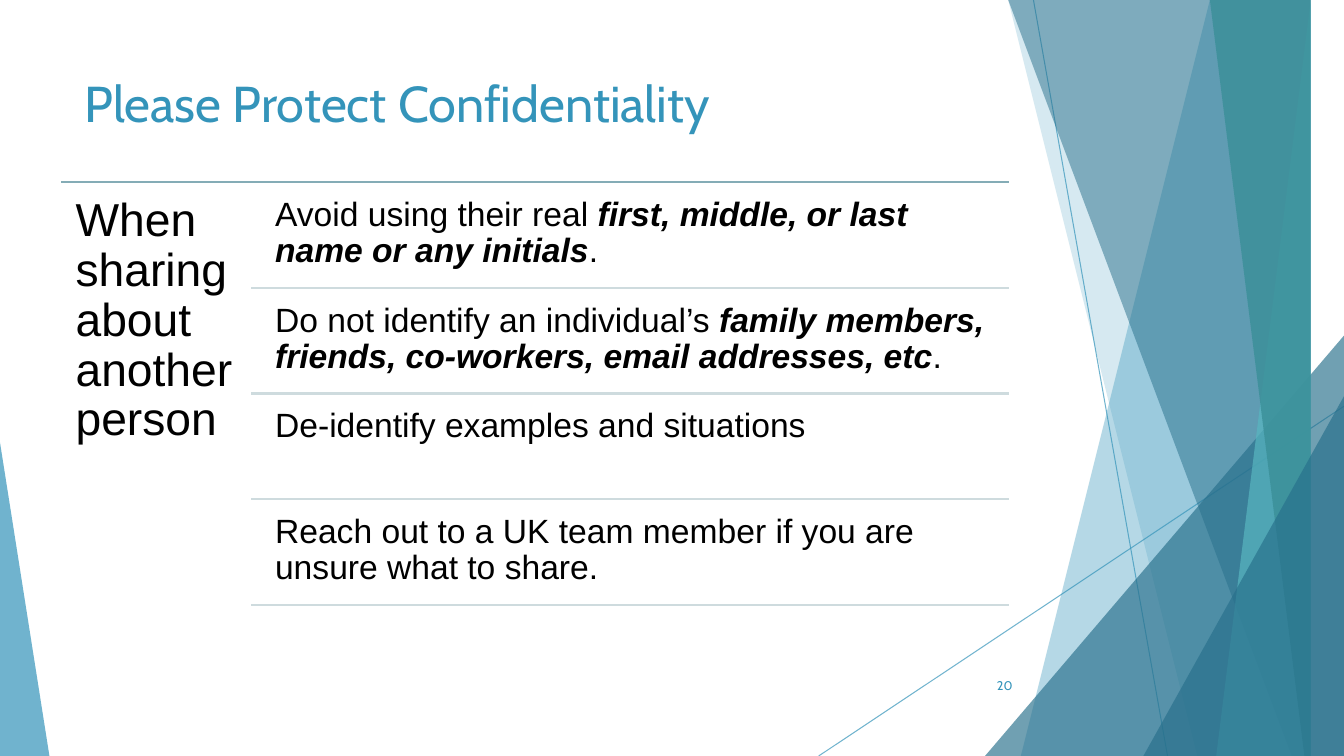
import lxml.etree
import pptx
import pptx.dml.color
import pptx.enum.shapes
import pptx.enum.text
import pptx.oxml.ns
import pptx.util

Inches = pptx.util.Inches
SLIDE_WIDTH, SLIDE_HEIGHT = 13.33, 7.5

COLORS = {
    "blue": "3494BA",
    "deep_blue": "276F8B",
    "aqua": "58B6C0",
    "teal": "3A8F98",
    "top_rule": "84ACB6",
    "row_rule": "CEDBDE",
    "text": "000000",
}

# Grid of the guidance list
LIST_LEFT, LIST_RIGHT, LIST_TOP = 0.61, 10.01, 1.81
ROWS_LEFT, ROW_TEXT_LEFT = 2.49, 2.63
ROW_PITCH, ROW_HEIGHT, ROW_GAP = 1.047, 1, 0.05

# Each row is a list of (text, emphasized) pieces
GUIDELINES = [
    [("Avoid using their real ", False),
     ("first, middle, or last name or any initials", True), (".", False)],
    [("Do not identify an individual’s ", False),
     ("family members, friends, co-workers, email addresses, etc", True),
     (".", False)],
    [("De-identify examples and situations", False)],
    [("Reach out to a UK team member if you are unsure what to share.", False)],
]

# Bands reaching the right edge: top left x, bottom left x, color, opacity
BACK_BANDS = [(12.28, 10.04, "blue", 36), (10.5, 11.83, "blue", 20)]
FRONT_BANDS = [
    (10.21, 12.91, "deep_blue", 50),
    (13.03, 11.92, "aqua", 70),
    (11.96, 13.18, "teal", 80),
]


def rgb(color):
    return pptx.dml.color.RGBColor.from_string(COLORS[color])


def set_opacity(fill, percent):
    """Add an alpha value to the solid color of a fill."""
    color = fill._xPr.find(".//" + pptx.oxml.ns.qn("a:srgbClr"))
    alpha = lxml.etree.SubElement(color, pptx.oxml.ns.qn("a:alpha"))
    alpha.set("val", str(percent * 1000))


def paint(shape, color, opacity):
    shape.shadow.inherit = False
    shape.fill.solid()
    shape.fill.fore_color.rgb = rgb(color)
    set_opacity(shape.fill, opacity)
    shape.line.fill.background()


def add_line(slide, start, end, color, width, opacity=100):
    line = slide.shapes.add_connector(
        pptx.enum.shapes.MSO_CONNECTOR.STRAIGHT,
        *(Inches(value) for value in (*start, *end)))
    line.line.color.rgb = rgb(color)
    line.line.width = pptx.util.Pt(width)
    if opacity < 100:
        set_opacity(line.line.fill, opacity)
    properties = line._element.spPr
    lxml.etree.SubElement(properties, pptx.oxml.ns.qn("a:effectLst"))


def add_band(slide, top_left, bottom_left, color, opacity):
    builder = slide.shapes.build_freeform(top_left, 0, scale=Inches(1))
    builder.add_line_segments([
        (SLIDE_WIDTH, 0), (SLIDE_WIDTH, SLIDE_HEIGHT),
        (bottom_left, SLIDE_HEIGHT)])
    paint(builder.convert_to_shape(), color, opacity)


def add_triangle(slide, left, top, width, apex, color, opacity):
    """Add a triangle that stands on the bottom edge of the slide."""
    triangle = slide.shapes.add_shape(
        pptx.enum.shapes.MSO_SHAPE.ISOSCELES_TRIANGLE,
        Inches(left), Inches(top), Inches(width), Inches(SLIDE_HEIGHT - top))
    triangle.adjustments[0] = apex
    paint(triangle, color, opacity)


def format_run(run, size, font="Arial", color="text", emphasized=False):
    run.font.size = pptx.util.Pt(size)
    run.font.name = font
    run.font.color.rgb = rgb(color)
    run.font.bold = run.font.italic = emphasized


def add_text(slide, left, top, width, height, pieces, size, inset=0.1, **style):
    box = slide.shapes.add_textbox(
        Inches(left), Inches(top), Inches(width), Inches(height))
    frame = box.text_frame
    frame.word_wrap = True
    frame.margin_left = frame.margin_right = Inches(inset)
    frame.margin_top = frame.margin_bottom = Inches(inset)
    paragraph = frame.paragraphs[0]
    paragraph.line_spacing = 0.9
    for text, emphasized in pieces:
        run = paragraph.add_run()
        run.text = text
        format_run(run, size, emphasized=emphasized, **style)
    return frame


def add_decoration(slide):
    add_line(slide, (10.25, 0), (11.58, SLIDE_HEIGHT), "blue", 0.75, 70)
    add_line(slide, (SLIDE_WIDTH, 4.03), (8.12, SLIDE_HEIGHT), "blue", 0.75, 70)
    for band in BACK_BANDS:
        add_band(slide, *band)
    add_triangle(slide, 9.77, 3.33, 3.56, 1, "deep_blue", 66)
    for band in FRONT_BANDS:
        add_band(slide, *band)
    add_triangle(slide, 11.34, 3.93, 1.99, 1, "deep_blue", 66)
    add_triangle(slide, 0, 4.39, 0.49, 0, "blue", 70)


def set_title(slide, text):
    title = slide.shapes.title
    title.left, title.top = Inches(0.74), Inches(0.67)
    title.width, title.height = Inches(9.4), Inches(1.44)
    frame = title.text_frame
    frame.text = text
    frame.vertical_anchor = pptx.enum.text.MSO_ANCHOR.TOP
    paragraph = frame.paragraphs[0]
    paragraph.alignment = pptx.enum.text.PP_ALIGN.LEFT
    format_run(paragraph.runs[0], 36, "Cabin", "blue")


def add_guidelines(slide):
    add_line(slide, (LIST_LEFT, LIST_TOP), (LIST_RIGHT, LIST_TOP),
             "top_rule", 1.5)
    add_text(slide, LIST_LEFT, LIST_TOP, ROWS_LEFT - LIST_LEFT, 4 * ROW_PITCH,
             [("When sharing about another person", False)], 33, inset=0.14)
    for index, pieces in enumerate(GUIDELINES):
        top = LIST_TOP + index * ROW_PITCH
        bottom = top + ROW_PITCH
        add_text(slide, ROW_TEXT_LEFT, top + ROW_GAP,
                 LIST_RIGHT - ROW_TEXT_LEFT, ROW_HEIGHT, pieces, 24)
        add_line(slide, (ROWS_LEFT, bottom), (LIST_RIGHT, bottom),
                 "row_rule", 1.5)


def add_slide_number(slide, number):
    frame = add_text(slide, 9.39, 6.61, 0.75, 0.4, [(number, False)], 9,
                     font="Cabin", color="blue")
    frame.vertical_anchor = pptx.enum.text.MSO_ANCHOR.MIDDLE
    frame.paragraphs[0].alignment = pptx.enum.text.PP_ALIGN.RIGHT


def main():
    presentation = pptx.Presentation()
    presentation.slide_width = Inches(SLIDE_WIDTH)
    presentation.slide_height = Inches(SLIDE_HEIGHT)
    title_only = presentation.slide_layouts[5]
    slide = presentation.slides.add_slide(title_only)

    add_decoration(slide)
    set_title(slide, "Please Protect Confidentiality")
    add_guidelines(slide)
    add_slide_number(slide, "20")

    presentation.save("out.pptx")


if __name__ == "__main__":
    main()
